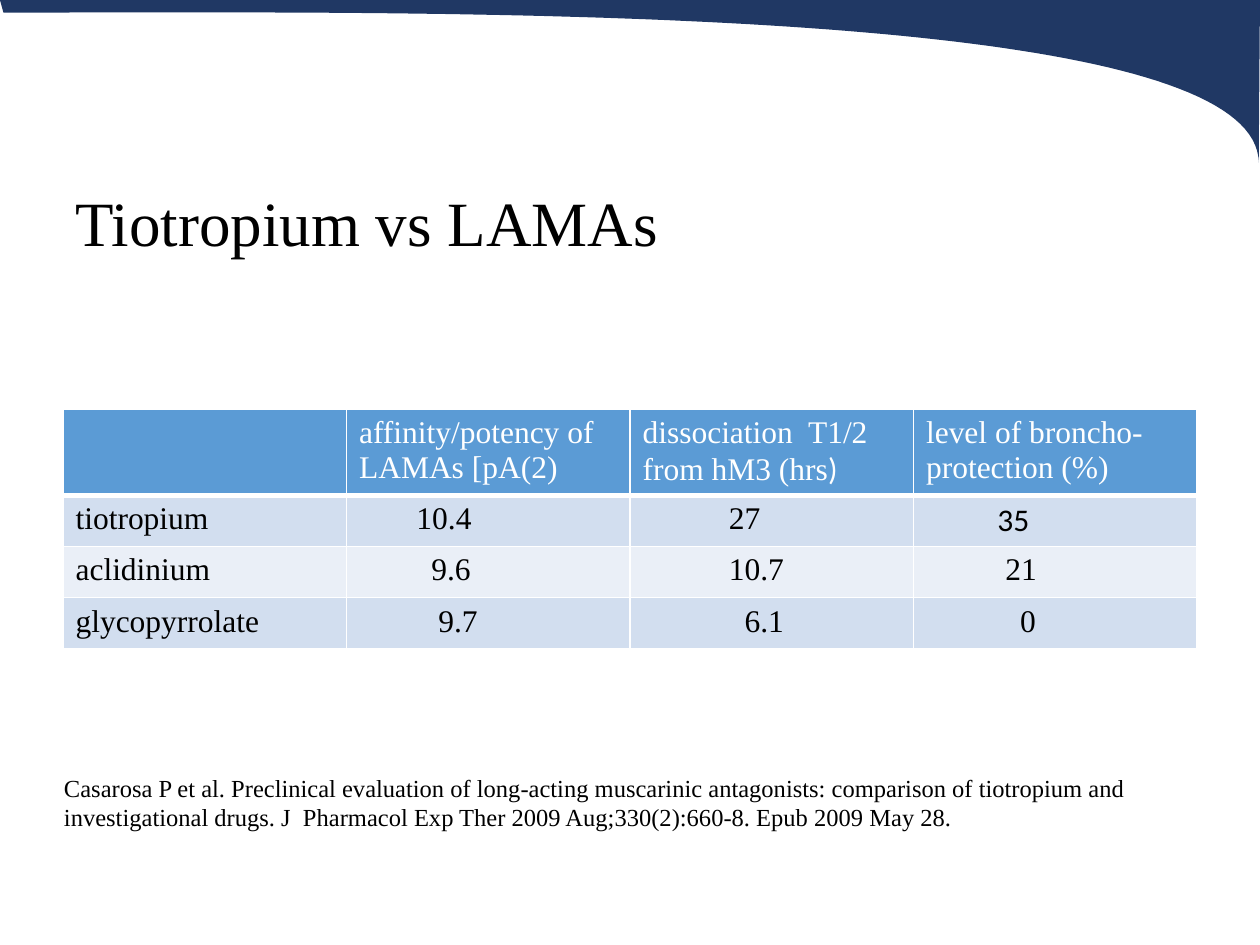
from lxml import etree
from pptx import Presentation
from pptx.dml.color import RGBColor
from pptx.enum.text import MSO_ANCHOR, PP_ALIGN
from pptx.oxml.ns import qn
from pptx.util import Pt

LEFT, MIDDLE = PP_ALIGN.LEFT, MSO_ANCHOR.MIDDLE
SERIF, SANS = "Times New Roman", "Calibri"
COLORS = {"navy": "203864", "blue": "5B9BD5", "band1": "D2DEEF",
          "band2": "EAEFF7", "white": "FFFFFF", "black": "000000"}


def add_run(p, text, size, color="black", font=SERIF):
    r = p.add_run()
    r.text = text
    for name, value in {"name": font, "size": Pt(size), "bold": False}.items():
        setattr(r.font, name, value)
    r.font.color.rgb = RGBColor.from_string(COLORS[color])


def add_border(cell, edge, width):
    ln = etree.Element(qn(f"a:{edge}"), w=str(Pt(width)))
    fill = etree.SubElement(ln, qn("a:solidFill"))
    etree.SubElement(fill, qn("a:srgbClr"), val=COLORS["white"])
    return ln


prs = Presentation()
prs.slide_width, prs.slide_height = Pt(720), Pt(540)
s = prs.slides.add_slide(prs.slide_layouts[5])

# Curved banner: the lower edge is a cubic curve from right to left
curve = [(719.3, 92.9), (718.5, 0), (242, 7.2), (2, 7.2)]
steps = 80
edge = []
for i in range(steps + 1):
    t = i / steps
    weights = ((1 - t) ** 3, 3 * t * (1 - t) ** 2, 3 * t * t * (1 - t), t ** 3)
    edge.append(tuple(Pt(sum(w * pt[k] for w, pt in zip(weights, curve)))
                      for k in (0, 1)))
fb = s.shapes.build_freeform(0, 0)
fb.add_line_segments([(Pt(720), 0)] + edge, close=True)
sp = fb.convert_to_shape()
sp.shadow.inherit = False
sp.fill.solid()
sp.fill.fore_color.rgb = RGBColor.from_string(COLORS["navy"])
sp.line.fill.background()

# Title
sp = s.shapes.title
sp.left, sp.top, sp.width, sp.height = Pt(36), Pt(84), Pt(648), Pt(90)
tf = sp.text_frame
tf.vertical_anchor = MIDDLE
p = tf.paragraphs[0]
p.alignment, p.line_spacing = LEFT, 0.9
add_run(p, "Tiotropium vs LAMAs", 36)

# Table: each cell is (left margin, paragraphs of (text, font) runs)
MARGIN = 7.2
header = [[], [[("affinity/potency of LAMAs [pA(2)", SERIF)]],
          [[("dissociation  T1/2", SERIF)],
           [("from hM3 (hrs", SERIF), (")", SANS)]],
          [[("level of broncho-", SERIF)], [("protection (%)", SERIF)]]]
body = [
    [("tiotropium", MARGIN), ("10.4", 40), ("27", 56.5), ("35", 48)],
    [("aclidinium", MARGIN), ("9.6", 48.5), ("10.7", 56.5), ("21", 52.5)],
    [("glycopyrrolate", MARGIN), ("9.7", 52.5), ("6.1", 65.5), ("0", 61)],
]
rows = [[(MARGIN, paragraphs) for paragraphs in header]]
for line in body:
    rows.append([(margin, [[(text, SANS if text == "35" else SERIF)]])
                 for text, margin in line])

table = s.shapes.add_table(4, 4, Pt(36), Pt(234), Pt(648), Pt(136.5)).table
for i, row in enumerate(rows):
    table.rows[i].height = Pt(29.2 if i else 48.9)
    fill = ("band1" if i % 2 else "band2") if i else "blue"
    for j, (margin, paragraphs) in enumerate(row):
        cell = table.cell(i, j)
        cell.margin_left = Pt(margin)
        tf = cell.text_frame
        for k, runs in enumerate(paragraphs):
            p = tf.add_paragraph() if k else tf.paragraphs[0]
            for text, font in runs:
                add_run(p, text, 18, "black" if i else "white", font)
        tcPr = cell._tc.get_or_add_tcPr()
        for name in ("lnL", "lnR", "lnT", "lnB"):
            width = 3 if i == 0 and name == "lnB" else 1
            tcPr.append(add_border(cell, name, width))
        cell.fill.solid()
        cell.fill.fore_color.rgb = RGBColor.from_string(COLORS[fill])

# Reference
sp = s.shapes.add_textbox(Pt(29.5), Pt(438), Pt(672.5), Pt(41))
tf = sp.text_frame
tf.word_wrap = True
add_run(tf.paragraphs[0],
        "Casarosa P et al. Preclinical evaluation of long-acting muscarinic "
        "antagonists: comparison of tiotropium and investigational drugs. "
        "J  Pharmacol Exp Ther 2009 Aug;330(2):660-8. Epub 2009 May 28.", 14)

prs.save("out.pptx")
